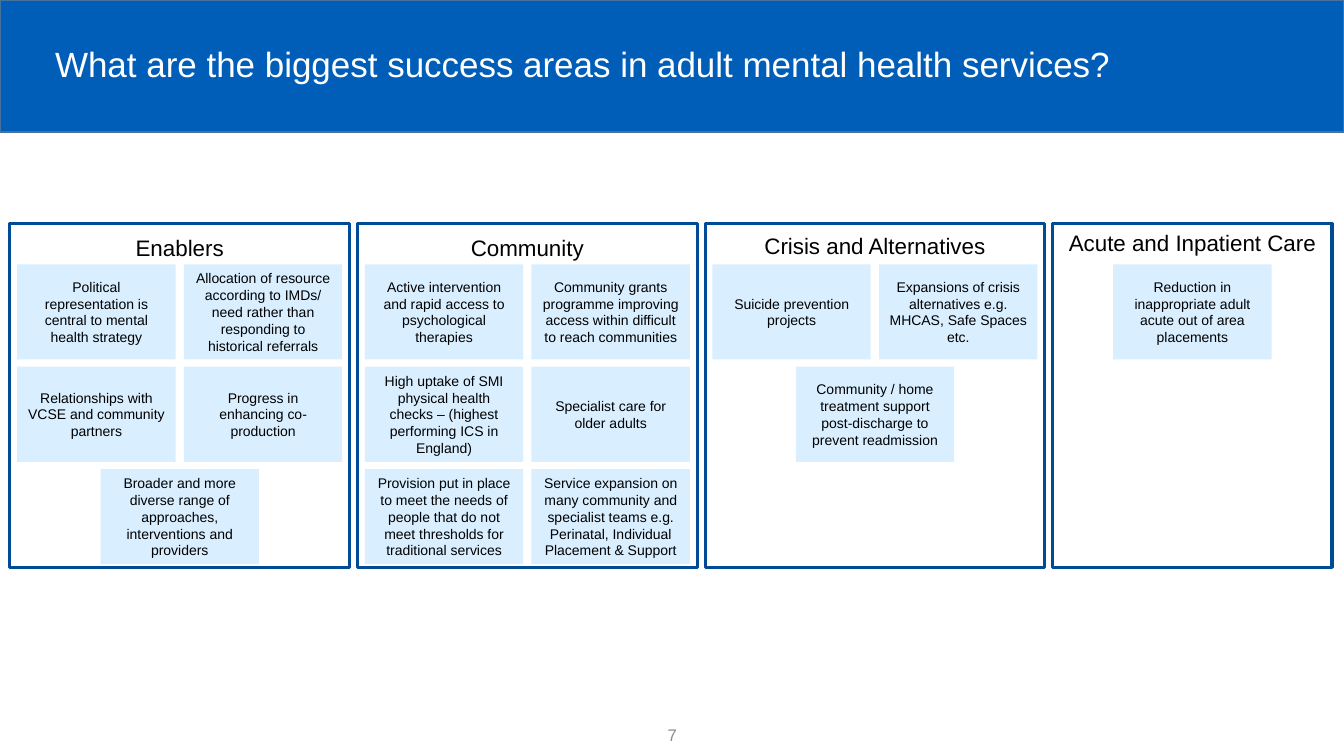
from dataclasses import dataclass
from pptx import Presentation
from pptx.dml.color import RGBColor
from pptx.enum.shapes import MSO_SHAPE
from pptx.enum.text import MSO_ANCHOR, PP_ALIGN
from pptx.util import Cm, Pt

# Content
TITLE = "What are the biggest success areas in adult mental health services?"
PAGE_NUMBER = "7"

# Each area: heading, heading top (cm), frame width (cm), rows of cards
AREAS = [
    ("Enablers", 5.77, 8.56, [
        ["Political representation is central to mental health strategy",
         "Allocation of resource according to IMDs/ need rather than responding to historical referrals"],
        ["Relationships with VCSE and community partners",
         "Progress in enhancing co-production"],
        ["Broader and more diverse range of approaches, interventions and providers"],
    ]),
    ("Community", 5.77, 8.56, [
        ["Active intervention and rapid access to psychological therapies",
         "Community grants programme improving access within difficult to reach communities"],
        ["High uptake of SMI physical health checks – (highest performing ICS in England)",
         "Specialist care for older adults"],
        ["Provision put in place to meet the needs of people that do not meet thresholds for traditional services",
         "Service expansion on many community and specialist teams e.g. Perinatal, "
         "Individual Placement & Support"],
    ]),
    ("Crisis and Alternatives", 5.71, 8.56, [
        ["Suicide prevention projects",
         "Expansions of crisis alternatives e.g. MHCAS, Safe Spaces etc."],
        ["Community / home treatment support post-discharge to prevent readmission"],
    ]),
    ("Acute and Inpatient Care", 5.64, 7.04, [
        ["Reduction in inappropriate adult acute out of area placements"],
    ]),
]


@dataclass(frozen=True)
class Theme:
    font: str = "Arial"
    banner: str = "005EB8"
    banner_edge: str = "43739E"
    frame: str = "004B96"
    card: str = "D9EFFF"
    text: str = "000000"
    title: str = "FFFFFF"
    muted: str = "8C8C8C"
    title_size: float = 25
    heading_size: float = 16
    number_size: float = 12
    card_size: float = 10


THEME = Theme()

# Layout in cm
SLIDE_W, SLIDE_H = 33.87, 19.05
BANNER_H = 3.33
FRAME_LEFT, FRAME_TOP, FRAME_H, FRAME_PITCH = 0.25, 5.64, 8.66, 8.76
CARD_W, CARD_H, CARD_GAP = 3.99, 2.4, 0.21
CARD_TOP, ROW_PITCH = 6.66, 2.58
HEADING_W, HEADING_H = 7.04, 0.94


def write(shape, words, size, color, align=PP_ALIGN.CENTER):
    frame = shape.text_frame
    frame.word_wrap = True
    frame.vertical_anchor = MSO_ANCHOR.MIDDLE
    paragraph = frame.paragraphs[0]
    paragraph.alignment = align
    run = paragraph.add_run()
    run.text = words
    run.font.name = THEME.font
    run.font.size = Pt(size)
    run.font.color.rgb = RGBColor.from_string(color)
    return paragraph


def add_box(slide, left, top, width, height, fill=None, line=None, line_width=1):
    box = slide.shapes.add_shape(MSO_SHAPE.RECTANGLE, Cm(left), Cm(top), Cm(width), Cm(height))
    box.shadow.inherit = False
    if fill:
        box.fill.solid()
        box.fill.fore_color.rgb = RGBColor.from_string(fill)
    else:
        box.fill.background()
    if line:
        box.line.color.rgb = RGBColor.from_string(line)
        box.line.width = Pt(line_width)
    else:
        box.line.fill.background()
    return box


def add_label(slide, left, top, width, height, *style):
    label = slide.shapes.add_textbox(Cm(left), Cm(top), Cm(width), Cm(height))
    return write(label, *style)


def add_area(slide, index, heading, heading_top, width, rows):
    left = FRAME_LEFT + index * FRAME_PITCH
    center = left + width / 2
    add_box(slide, left, FRAME_TOP, width, FRAME_H, line=THEME.frame, line_width=2.25)
    add_label(slide, center - HEADING_W / 2, heading_top, HEADING_W, HEADING_H,
              heading, THEME.heading_size, THEME.text)
    # Cards, each row centred in its frame
    for row, cards in enumerate(rows):
        row_width = len(cards) * (CARD_W + CARD_GAP) - CARD_GAP
        for column, words in enumerate(cards):
            card_left = center - row_width / 2 + column * (CARD_W + CARD_GAP)
            card = add_box(slide, card_left, CARD_TOP + row * ROW_PITCH, CARD_W, CARD_H, THEME.card)
            write(card, words, THEME.card_size, THEME.text)


def main():
    deck = Presentation()
    deck.slide_width, deck.slide_height = Cm(SLIDE_W), Cm(SLIDE_H)
    slide = deck.slides.add_slide(deck.slide_layouts[6])

    # Banner and title
    add_box(slide, 0, 0, SLIDE_W, BANNER_H, THEME.banner, THEME.banner_edge)
    title = add_label(slide, 1.14, 0.91, 31.6, 1.5, TITLE, THEME.title_size, THEME.title, PP_ALIGN.LEFT)
    title.line_spacing = 0.9

    # Success areas
    for index, area in enumerate(AREAS):
        add_area(slide, index, *area)

    # Page number
    add_label(slide, 13.13, 18.01, 7.62, 1.01, PAGE_NUMBER, THEME.number_size, THEME.muted)

    deck.save("out.pptx")


if __name__ == "__main__":
    main()
